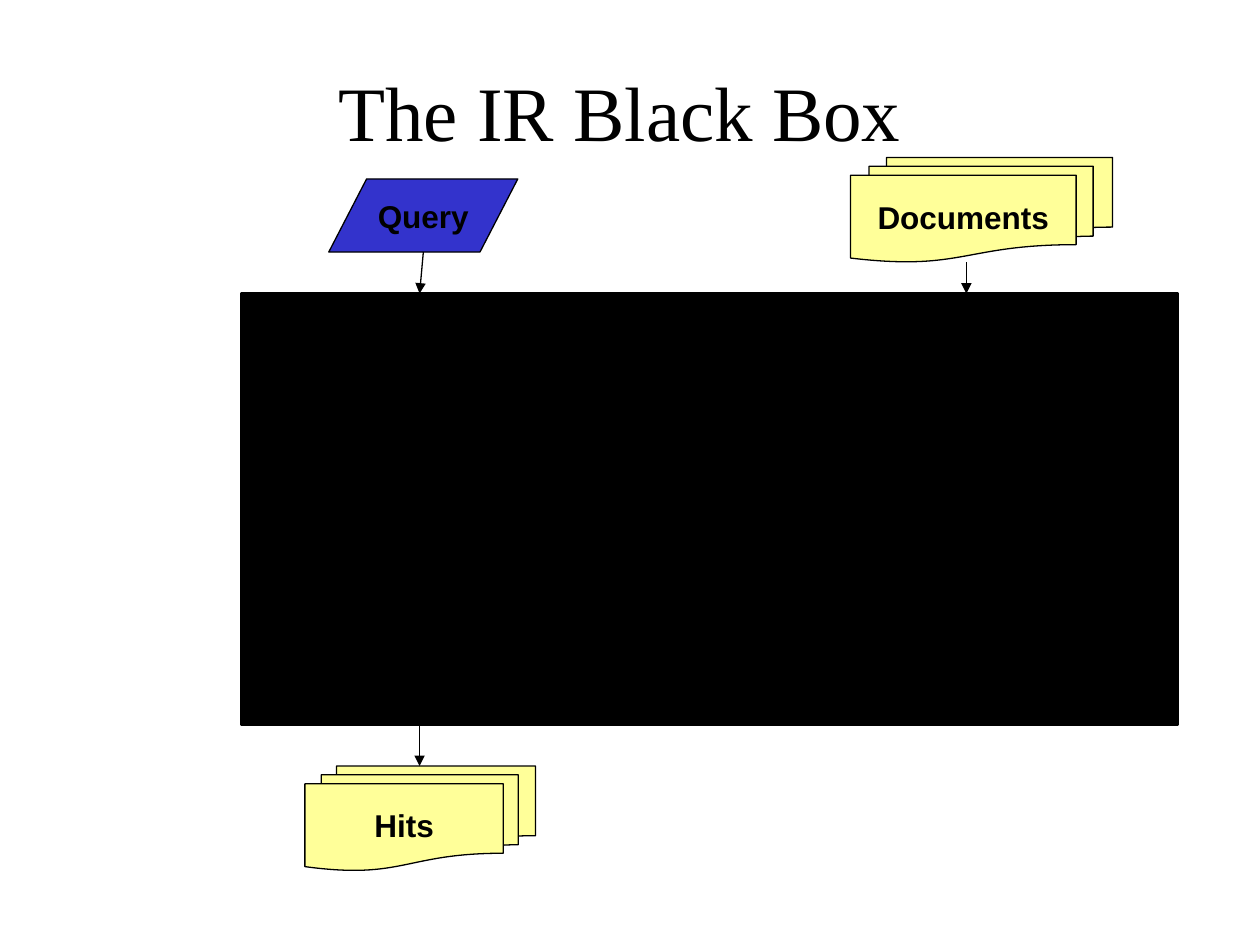
from dataclasses import dataclass

import pptx
import pptx.dml.color
import pptx.enum.shapes
import pptx.enum.text
import pptx.oxml
import pptx.oxml.ns
import pptx.util
from pptx.util import Inches

ShapeKind = pptx.enum.shapes.MSO_SHAPE


@dataclass(frozen=True)
class Theme:
    ink: str = "000000"
    paper: str = "FFFFFF"
    document: str = "FFFF99"
    query: str = "3333CC"
    title_font: str = "Times New Roman"
    label_font: str = "Arial"
    title_size: int = 44
    label_size: int = 18
    thin_line: float = 0.75
    box_line: float = 2


@dataclass(frozen=True)
class Node:
    kind: ShapeKind
    left: float
    top: float
    width: float
    height: float
    fill: str
    label: str = ""
    line_width: float = Theme.thin_line


@dataclass(frozen=True)
class Arrow:
    start: tuple[float, float]
    end: tuple[float, float]


THEME = Theme()
BOX_TOP, BOX_HEIGHT = 2.33, 3.42
BOX_BOTTOM = BOX_TOP + BOX_HEIGHT
QUERY_X, DOCUMENTS_X = 3.33, 7.67

NODES = [
    Node(ShapeKind.FLOWCHART_MULTIDOCUMENT, 6.75, 1.25, 2.08, 0.83, THEME.document, "Documents"),
    Node(ShapeKind.FLOWCHART_DATA, 2.61, 1.42, 1.5, 0.58, THEME.query, "Query"),
    Node(ShapeKind.FLOWCHART_MULTIDOCUMENT, 2.42, 6.08, 1.83, 0.83, THEME.document, "Hits"),
]
ARROWS = [
    Arrow((3.36, 2), (QUERY_X, BOX_TOP)),
    Arrow((DOCUMENTS_X, 2.08), (DOCUMENTS_X, BOX_TOP)),
    Arrow((QUERY_X, BOX_BOTTOM), (QUERY_X, 6.08)),
]
BLACK_BOX = Node(ShapeKind.RECTANGLE, 1.92, BOX_TOP, 7.42, BOX_HEIGHT, THEME.ink,
                 line_width=THEME.box_line)


def rgb(value: str) -> pptx.dml.color.RGBColor:
    return pptx.dml.color.RGBColor.from_string(value)


def write_text(shape, text: str, *, font: str, size: float, bold: bool = False,
               wrap: bool = True) -> None:
    frame = shape.text_frame
    frame.text = text
    frame.word_wrap = wrap
    frame.auto_size = pptx.enum.text.MSO_AUTO_SIZE.NONE
    frame.vertical_anchor = pptx.enum.text.MSO_ANCHOR.MIDDLE
    paragraph = frame.paragraphs[0]
    paragraph.alignment = pptx.enum.text.PP_ALIGN.CENTER
    paragraph.font.name = font
    paragraph.font.size = pptx.util.Pt(size)
    paragraph.font.bold = bold
    paragraph.font.color.rgb = rgb(THEME.ink)


def style_line(line, width: float) -> None:
    line.color.rgb = rgb(THEME.ink)
    line.width = pptx.util.Pt(width)


def draw_node(slide: pptx.slide.Slide, node: Node) -> None:
    shape = slide.shapes.add_shape(node.kind, Inches(node.left), Inches(node.top),
                                   Inches(node.width), Inches(node.height))
    shape.shadow.inherit = False
    shape.fill.solid()
    shape.fill.fore_color.rgb = rgb(node.fill)
    style_line(shape.line, node.line_width)
    if node.label:
        write_text(shape, node.label, font=THEME.label_font, size=THEME.label_size,
                   bold=True, wrap=False)


def draw_arrow(slide: pptx.slide.Slide, arrow: Arrow) -> None:
    connector = slide.shapes.add_connector(
        pptx.enum.shapes.MSO_CONNECTOR.STRAIGHT,
        *(Inches(value) for value in arrow.start + arrow.end))
    style_line(connector.line, THEME.thin_line)
    properties = connector._element.spPr
    head = pptx.oxml.parse_xml(
        f'<a:tailEnd {pptx.oxml.ns.nsdecls("a")} type="triangle"/>')
    properties.find(pptx.oxml.ns.qn("a:ln")).append(head)
    properties.append(pptx.oxml.parse_xml(f'<a:effectLst {pptx.oxml.ns.nsdecls("a")}/>'))


def main() -> None:
    presentation = pptx.Presentation()
    presentation.slide_width = Inches(10)
    presentation.slide_height = Inches(7.5)
    slide = presentation.slides.add_slide(presentation.slide_layouts.get_by_name("Title Only"))
    slide.background.fill.solid()
    slide.background.fill.fore_color.rgb = rgb(THEME.paper)

    title = slide.shapes.title
    title.left, title.top = Inches(0.67), Inches(0.25)
    title.width, title.height = Inches(8.5), Inches(1.25)
    write_text(title, "The IR Black Box", font=THEME.title_font, size=THEME.title_size)

    for node in NODES:
        draw_node(slide, node)
    for arrow in ARROWS:
        draw_arrow(slide, arrow)
    draw_node(slide, BLACK_BOX)
    presentation.save("out.pptx")


if __name__ == "__main__":
    main()
